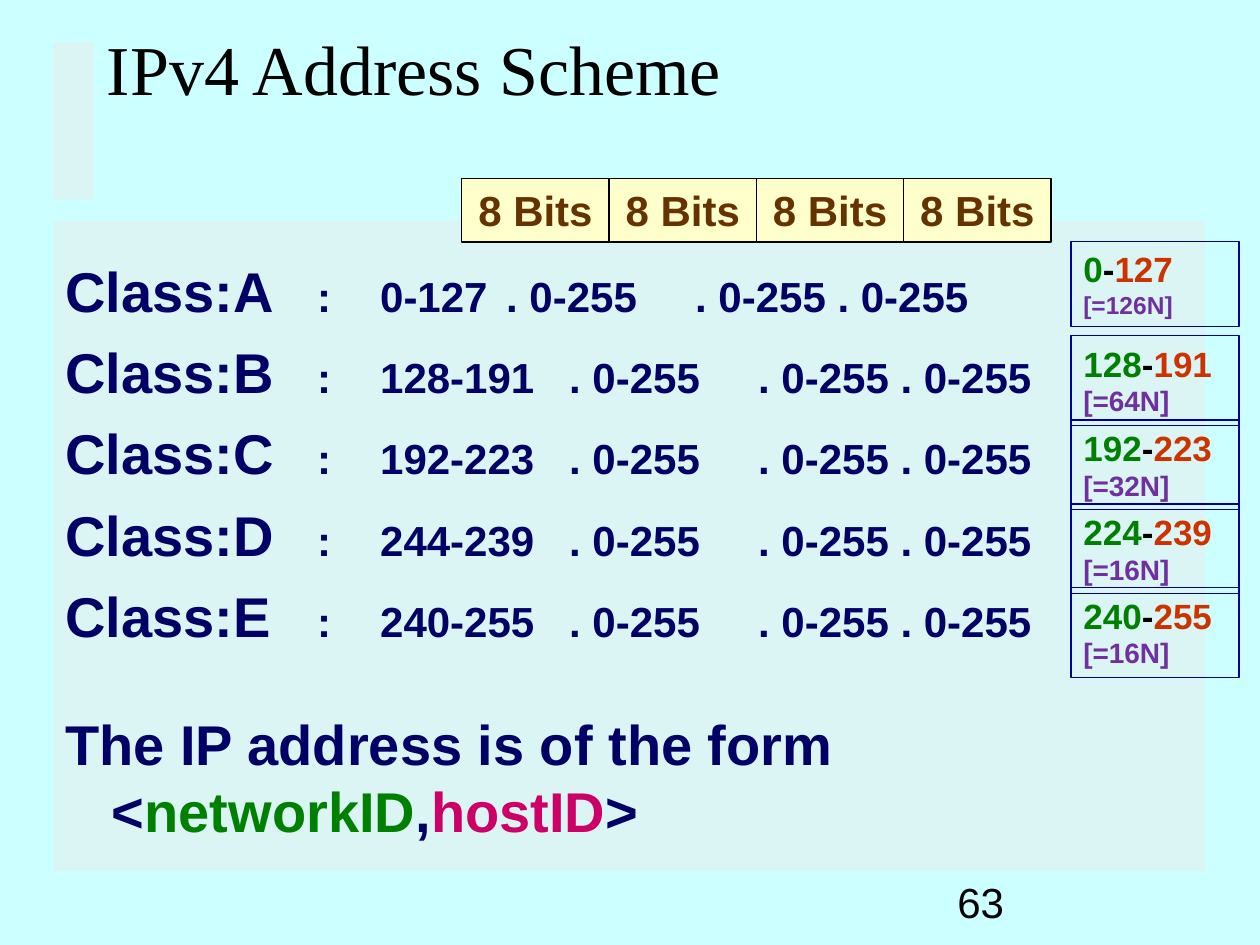
from lxml.etree import SubElement
from pptx import Presentation
from pptx.dml.color import RGBColor
from pptx.enum.shapes import MSO_SHAPE as Shape
from pptx.enum.text import MSO_ANCHOR as Anchor, MSO_AUTO_SIZE as AutoSize, PP_ALIGN as Align
from pptx.oxml.ns import qn
from pptx.util import Cm, Pt

SKY = RGBColor(0xCC, 0xFF, 0xFF)
PANEL = RGBColor(0xEA, 0xEA, 0xEA)
CREAM = RGBColor(0xFF, 0xFF, 0xCC)
BLACK = RGBColor(0, 0, 0)
NAVY = RGBColor(0, 0, 0x66)
BLUE = RGBColor(0, 0, 0x99)
BROWN = RGBColor(0x66, 0x33, 0)
GREEN = RGBColor(0, 0x80, 0)
PINK = RGBColor(0xCC, 0, 0x66)
RED = RGBColor(0xCC, 0x33, 0)
PURPLE = RGBColor(0x70, 0x30, 0xA0)

CLASSES = [
    ("A", "0-127", 7.87, 10.49),
    ("B", "128-191", 7.37, 10.92),
    ("C", "192-223", 6.94, 10.49),
    ("D", "244-239", 7.37, 10.92),
    ("E", "240-255", 7.47, 11.03),
]
COLON_STOP = 5.36
OCTET_STEP = 3.1
RANGES = [
    ("0", "127", "[=126N]", 14, 4.87, 1.72),
    ("128", "191", "[=64N]", 16, 6.77, 1.81),
    ("192", "223", "[=32N]", 16, 8.47, 1.81),
    ("224", "239", "[=16N]", 16, 10.16, 1.81),
    ("240", "255", "[=16N]", 16, 11.85, 1.81),
]


class AddressSlide:
    font_name = "Arial"

    def __init__(self, deck):
        self.slide = deck.slides.add_slide(deck.slide_layouts[1])
        self.slide.background.fill.solid()
        self.slide.background.fill.fore_color.rgb = SKY

    def style(self, font, size=None, color=None, bold=None, name=None):
        font.name = name or self.font_name
        font.bold = bold
        if size:
            font.size = Pt(size)
        if color is not None:
            font.color.rgb = color

    def add_runs(self, paragraph, runs):
        for text, size, color in runs:
            run = paragraph.add_run()
            run.text = text
            run.font.size = Pt(size)
            run.font.color.rgb = color

    def rect(self, left, top, width, height, fill=None, line=None):
        rect = self.slide.shapes.add_shape(
            Shape.RECTANGLE, Cm(left), Cm(top), Cm(width), Cm(height))
        rect.shadow.inherit = False
        if fill is None:
            rect.fill.background()
        else:
            rect.fill.solid()
            rect.fill.fore_color.rgb = fill
        if line is None:
            rect.line.fill.background()
        else:
            rect.line.color.rgb = line
            rect.line.width = Pt(0.75)
        rect.text_frame.word_wrap = True
        rect.text_frame.vertical_anchor = Anchor.TOP
        return rect

    def panel(self, left, top, width, height):
        panel = self.rect(left, top, width, height, PANEL)
        color = panel.element.spPr.find(qn("a:solidFill"))[0]
        SubElement(color, qn("a:alpha"), val="50000")

    def place(self, holder, left, top, width, height):
        holder.left, holder.top = Cm(left), Cm(top)
        holder.width, holder.height = Cm(width), Cm(height)
        holder.text_frame.auto_size = AutoSize.NONE
        holder.element.getparent().append(holder.element)
        return holder.text_frame

    def title(self, text):
        frame = self.place(self.slide.shapes.title, 1.9, 0.2, 21.59, 2.34)
        frame.vertical_anchor = Anchor.MIDDLE
        heading = frame.paragraphs[0]
        heading.text = text
        heading.alignment = Align.LEFT
        self.style(heading.font, 40, BLACK, name="Times New Roman")

    def list_item(self, paragraph, runs, stops=(), hanging=0):
        properties = paragraph._p.get_or_add_pPr()
        properties.set("marL", str(Cm(hanging)))
        properties.set("indent", str(-Cm(hanging)))
        SubElement(properties, qn("a:buNone"))
        if stops:
            tabs = SubElement(properties, qn("a:tabLst"))
            for stop in stops:
                SubElement(tabs, qn("a:tab"), pos=str(Cm(stop)), algn="l")
        paragraph.alignment = Align.LEFT
        self.style(paragraph.font, bold=True)
        self.add_runs(paragraph, runs)

    def address_list(self):
        frame = self.place(self.slide.placeholders[1], 1.06, 3.39, 22.43, 15.66)
        frame.margin_top = Cm(1.78)
        for index, (letter, first, start, dot) in enumerate(CLASSES):
            item = frame.add_paragraph() if index else frame.paragraphs[0]
            octets = f"\t:\t{first}\t. 0-255\t. 0-255 . 0-255"
            stops = (COLON_STOP, start, dot, dot + OCTET_STEP)
            self.list_item(item, [(f"Class:{letter}", 32, NAVY), (octets, 24, NAVY)], stops)
            item.space_before = Pt(8 if index else 0)
        form = frame.add_paragraph()
        self.list_item(form, [
            ("The IP address is of the form <", 32, NAVY), ("networkID", 32, GREEN),
            (",", 32, NAVY), ("hostID", 32, PINK), (">", 32, NAVY)], hanging=0.94)
        form.space_before = Pt(35)

    def octet_box(self, left):
        label = self.rect(left, 3.6, 2.97, 1.28, CREAM, BLACK).text_frame.paragraphs[0]
        label.text = "8 Bits"
        label.alignment = Align.CENTER
        self.style(label.font, 24, BROWN, True)

    def range_box(self, low, high, count, count_size, top, height):
        label = self.rect(21.59, top, 3.39, height, line=BLUE).text_frame.paragraphs[0]
        label.alignment = Align.LEFT
        self.style(label.font, bold=True)
        self.add_runs(label, [(low, 20, GREEN), ("-", 20, BLACK),
                              (f"{high} ", 20, RED), (count, count_size, PURPLE)])

    def page_number(self, text):
        box = self.slide.shapes.add_textbox(Cm(19.05), Cm(17.55), Cm(5.29), Cm(1.27))
        box.text_frame.word_wrap = True
        box.text_frame.vertical_anchor = Anchor.MIDDLE
        number = box.text_frame.paragraphs[0]
        number.text = text
        self.style(number.font, 24, BLACK)


def main():
    deck = Presentation()
    deck.slide_width, deck.slide_height = Cm(25.4), Cm(19.05)
    page = AddressSlide(deck)
    page.panel(1.08, 4.45, 23.21, 13.11)
    page.panel(1.06, 0.85, 0.83, 3.17)
    page.page_number("63")
    page.title("IPv4 Address Scheme")
    page.address_list()
    for column in range(4):
        page.octet_box(9.31 + column * 2.97)
    for address_range in RANGES:
        page.range_box(*address_range)
    deck.save("out.pptx")


if __name__ == "__main__":
    main()
